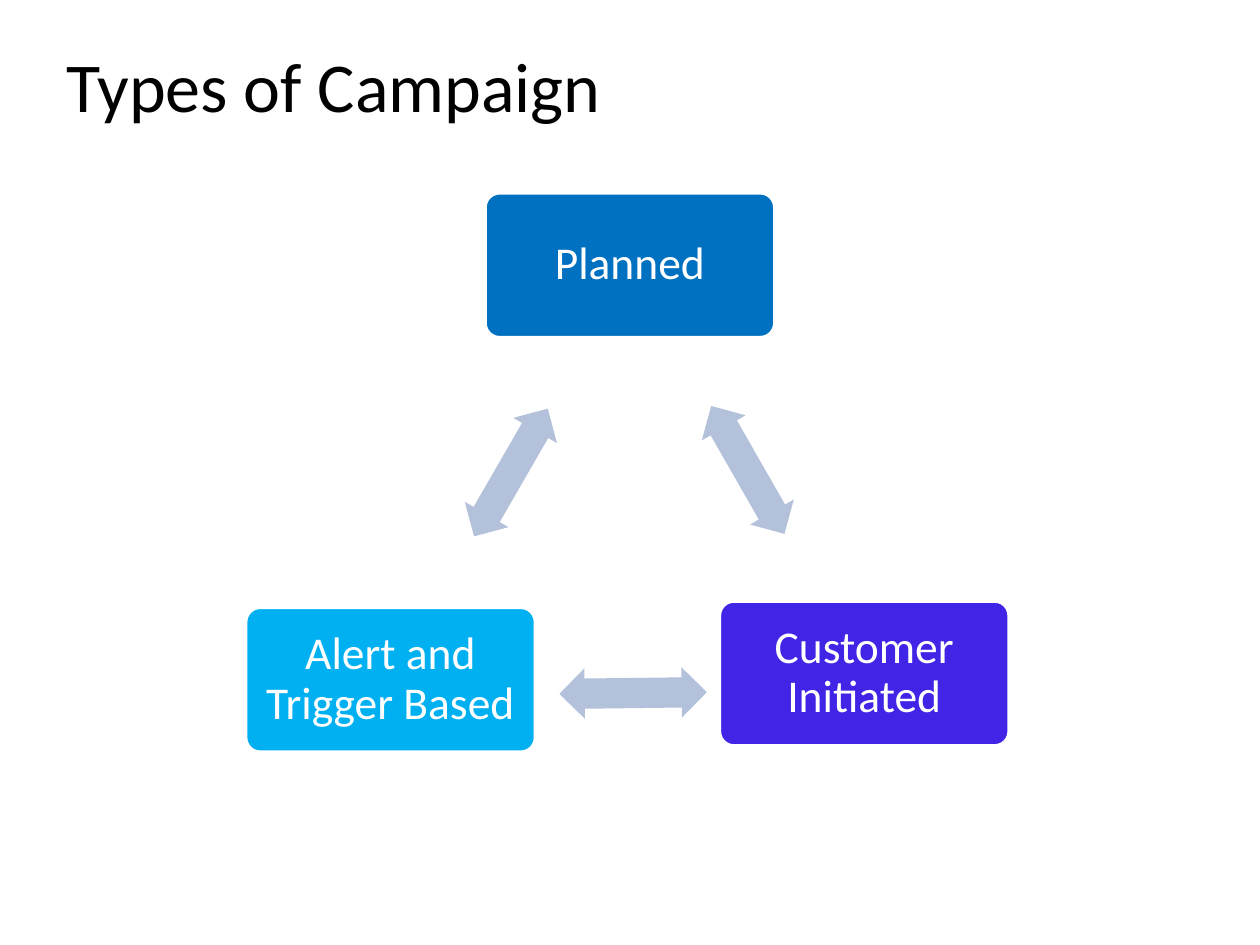
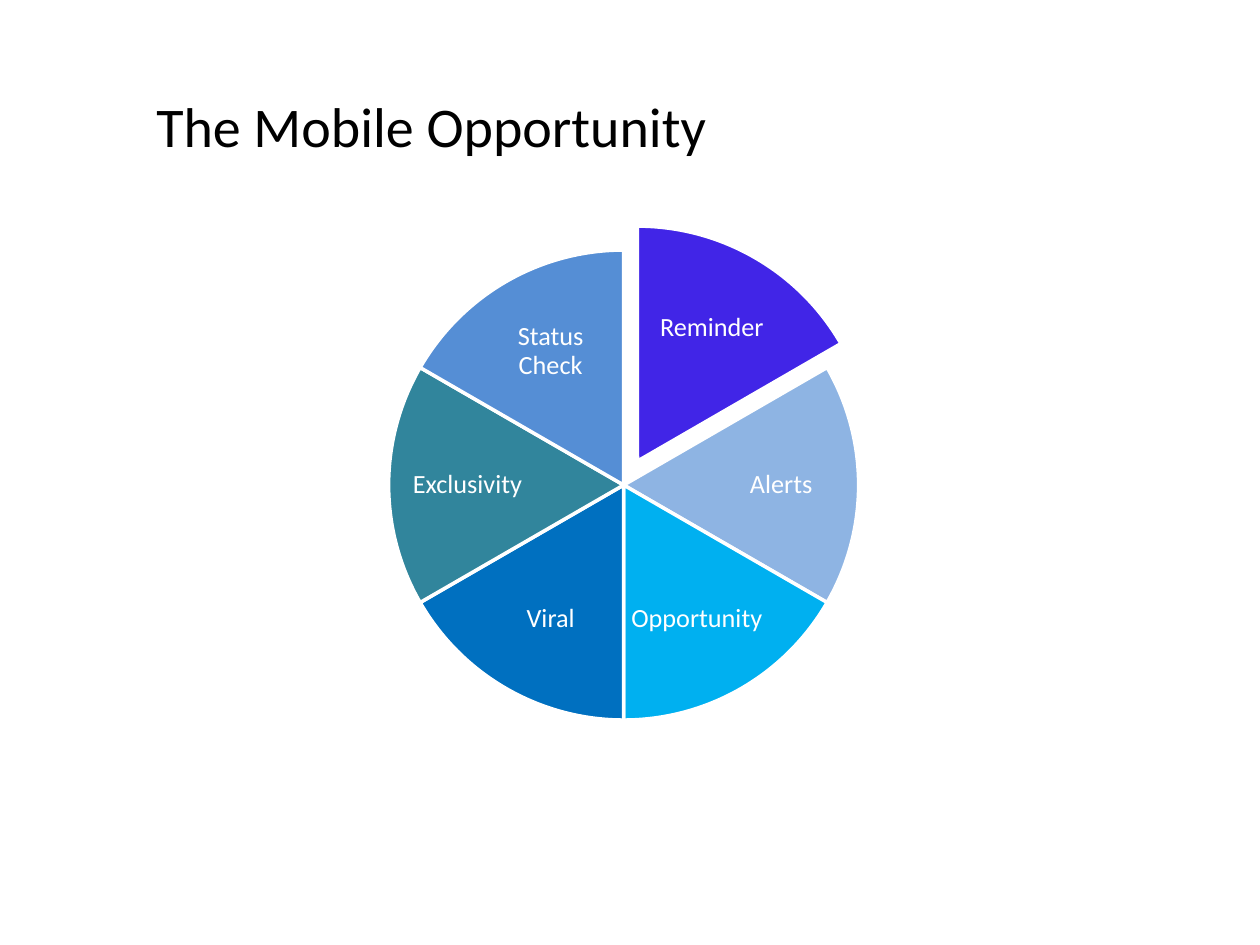
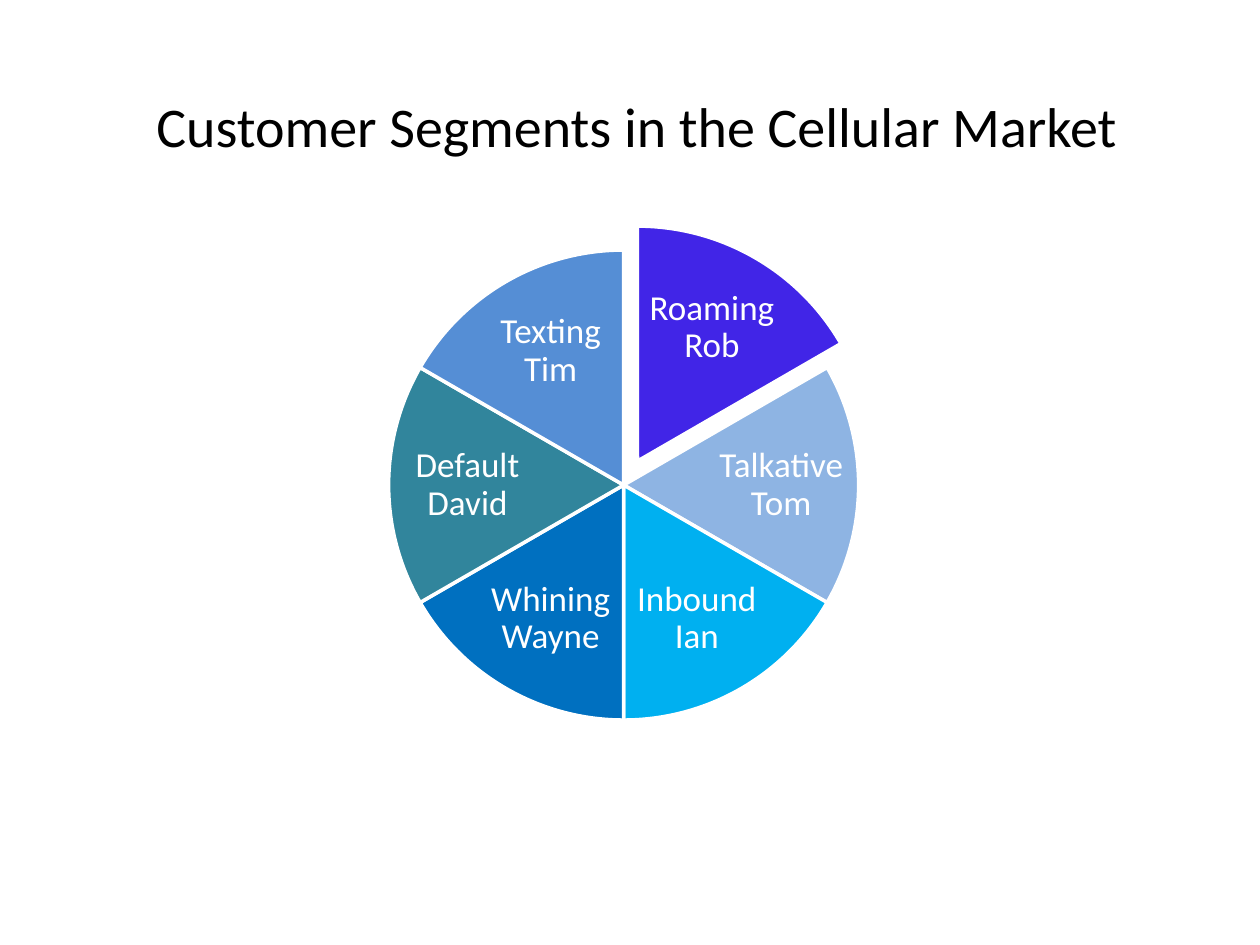
import pptx
import pptx.dml.color
import pptx.enum.shapes
import pptx.enum.text
import pptx.util
from pptx.util import Inches

COLORS = {
    "text": "000000",
    "white": "FFFFFF",
    "arrow": "B3C1DB",
    "blue": "0070C0",
    "violet": "4125E7",
    "cyan": "00B0F0",
    "pale": "8EB4E3",
    "teal": "31859C",
    "medium": "558ED5",
}
SHAPES = pptx.enum.shapes.MSO_SHAPE
TITLE_ONLY = 5
CENTERED = {"alignment": pptx.enum.text.PP_ALIGN.CENTER, "line_spacing": 0.9}
LEFT = {"alignment": pptx.enum.text.PP_ALIGN.LEFT}

# Campaign boxes: text, fill, left, top
CAMPAIGNS = [
    ("Planned", "blue", 3.85, 1.53),
    ("Customer Initiated", "violet", 5.71, 4.77),
    ("Alert and Trigger Based", "cyan", 1.95, 4.82),
]
# Arrows between the boxes: left, top, rotation
ARROWS = [(5.35, 3.53, 60.2), (4.44, 5.3, 179.3), (3.47, 3.55, 300)]

# Slices clockwise from the top: fill, label offset from the slice's centre
SLICES = [
    ("violet", 0.59, -1.06),
    ("pale", 1.25, 0),
    ("cyan", 0.58, 1.06),
    ("blue", -0.58, 1.06),
    ("teal", -1.24, 0),
    ("medium", -0.58, -1.06),
]
WHEEL_CENTER = (4.95, 3.85)
WHEEL_DIAMETER = 3.73
FIRST_SLICE_SHIFT = (0.11, -0.19)
LABEL_SIZE = (1.09, 0.8)

WHEELS = [
    ("The Mobile Opportunity", 4.77, 15,
     ["Reminder", "Alerts", "Opportunity", "Viral", "Exclusivity", "Status Check"]),
    ("Customer Segments in the Cellular Market", 7.91, 20,
     ["Roaming Rob", "Talkative Tom", "Inbound Ian", "Whining Wayne",
      "Default David", "Texting Tim"]),
]


def rgb(name):
    return pptx.dml.color.RGBColor.from_string(COLORS[name])


def set_all(target, values):
    for name, value in values.items():
        setattr(target, name, value)


class Deck:
    """Holds the presentation, its style and the current slide."""

    font = "Calibri"

    def __init__(self):
        self.presentation = pptx.Presentation()
        self.presentation.slide_width = Inches(10)
        self.presentation.slide_height = Inches(7.5)
        self.slide = None

    def add_slide(self):
        layout = self.presentation.slide_layouts[TITLE_ONLY]
        self.slide = self.presentation.slides.add_slide(layout)

    def fill_text(self, shape, text, size, color, paragraph_format, frame_format):
        frame = shape.text_frame
        frame.text = text
        set_all(frame, frame_format)
        paragraph = frame.paragraphs[0]
        set_all(paragraph, paragraph_format)
        font = paragraph.runs[0].font
        set_all(font, {"name": self.font, "size": pptx.util.Pt(size)})
        font.color.rgb = rgb(color)

    def title(self, text, left, top, width, height, size, wrap):
        shape = self.slide.shapes.title
        set_all(shape, {"left": Inches(left), "top": Inches(top),
                        "width": Inches(width), "height": Inches(height)})
        self.fill_text(shape, text, size, "text", LEFT, {
            "word_wrap": wrap,
            "vertical_anchor": pptx.enum.text.MSO_ANCHOR.TOP,
            "auto_size": pptx.enum.text.MSO_AUTO_SIZE.SHAPE_TO_FIT_TEXT,
        })

    def shape(self, kind, left, top, width, height, fill, adjustments, outlined=True):
        shape = self.slide.shapes.add_shape(
            kind, Inches(left), Inches(top), Inches(width), Inches(height))
        shape.shadow.inherit = False
        shape.fill.solid()
        shape.fill.fore_color.rgb = rgb(fill)
        if outlined:
            shape.line.color.rgb = rgb("white")
            shape.line.width = pptx.util.Pt(2)
        else:
            shape.line.fill.background()
        for index, value in enumerate(adjustments):
            shape.adjustments[index] = value
        return shape

    def caption(self, shape, text, size, inset):
        """Put white text in the middle of a shape."""
        frame_format = {f"margin_{side}": Inches(inset)
                        for side in ("left", "top", "right", "bottom")}
        frame_format["word_wrap"] = True
        frame_format["vertical_anchor"] = pptx.enum.text.MSO_ANCHOR.MIDDLE
        self.fill_text(shape, text, size, "white", CENTERED, frame_format)

    def box(self, text, fill, left, top):
        shape = self.shape(SHAPES.ROUNDED_RECTANGLE, left, top, 2.3, 1.15, fill, [0.1])
        self.caption(shape, text, 26, 0.08)

    def arrow(self, left, top, rotation):
        shape = self.shape(SHAPES.LEFT_RIGHT_ARROW, left, top, 1.17, 0.4,
                           "arrow", [0.6, 0.5], outlined=False)
        shape.rotation = rotation

    def label(self, text, center_x, center_y, size):
        width, height = LABEL_SIZE
        shape = self.slide.shapes.add_textbox(
            Inches(center_x - width / 2), Inches(center_y - height / 2),
            Inches(width), Inches(height))
        self.caption(shape, text, size, 0.02)

    def wheel(self, labels, size):
        """Draw equal slices, the first one pulled out of the circle."""
        step = 360 / len(SLICES)
        radius = WHEEL_DIAMETER / 2
        for index, (text, (fill, label_x, label_y)) in enumerate(zip(labels, SLICES)):
            shift_x, shift_y = (0, 0) if index else FIRST_SLICE_SHIFT
            center_x = WHEEL_CENTER[0] + shift_x
            center_y = WHEEL_CENTER[1] + shift_y
            # Pie angles are 60000ths of a degree; adjustments are 100000ths
            angles = [(270 + step * edge) % 360 * 0.6 for edge in (index, index + 1)]
            self.shape(SHAPES.PIE, center_x - radius, center_y - radius,
                       WHEEL_DIAMETER, WHEEL_DIAMETER, fill, angles)
            self.label(text, center_x + label_x, center_y + label_y, size)


def main():
    deck = Deck()

    deck.add_slide()
    deck.title("Types of Campaign", 0.43, 0.29, 8.43, 0.77, 40, wrap=True)
    for campaign, arrow in zip(CAMPAIGNS, ARROWS):
        deck.box(*campaign)
        deck.arrow(*arrow)

    for title, title_width, label_size, labels in WHEELS:
        deck.add_slide()
        deck.title(title, 1.14, 0.68, title_width, 0.64, 32, wrap=False)
        deck.wheel(labels, label_size)

    deck.presentation.save("out.pptx")


if __name__ == "__main__":
    main()
